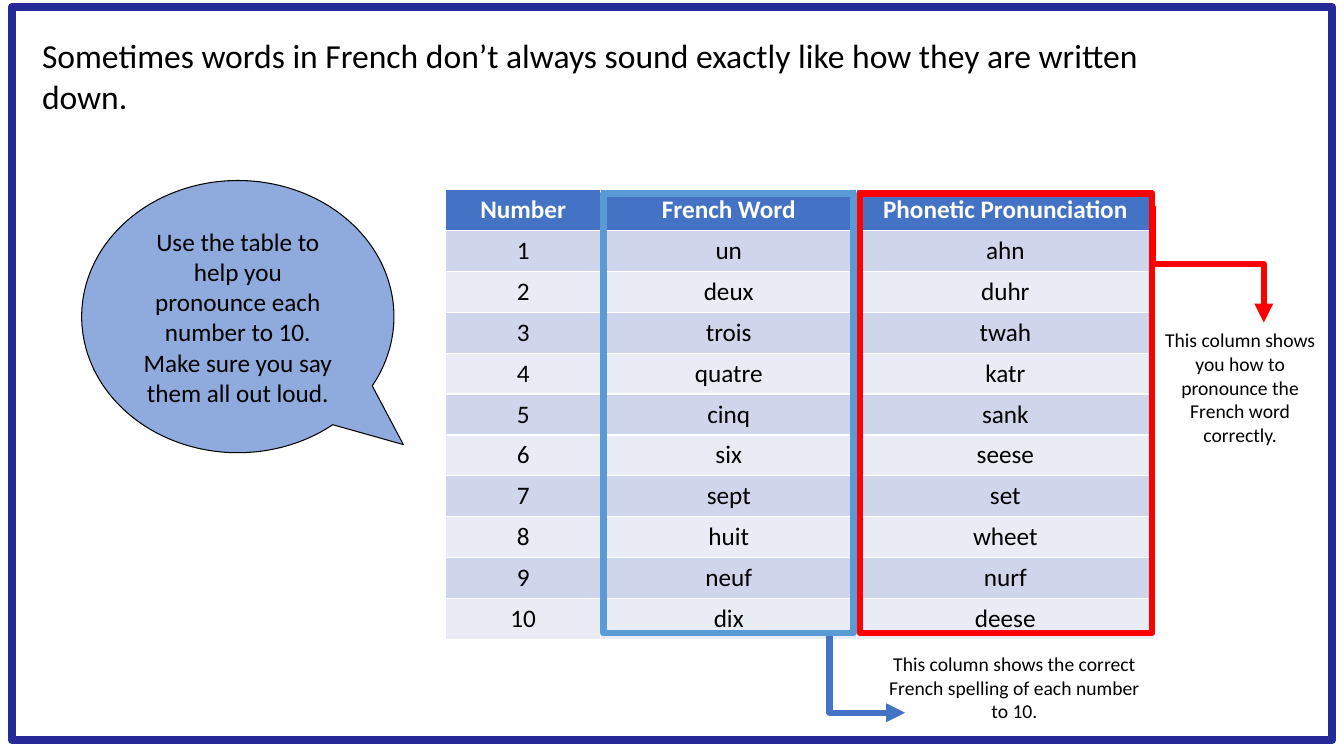
from lxml import etree
from pptx import Presentation
from pptx.dml.color import RGBColor
from pptx.enum.shapes import MSO_CONNECTOR, MSO_SHAPE
from pptx.enum.text import MSO_ANCHOR, PP_ALIGN
from pptx.oxml.ns import qn
from pptx.util import Cm, Pt

ELBOW = MSO_CONNECTOR.ELBOW
RECTANGLE = MSO_SHAPE.RECTANGLE
SPEECH_BUBBLE = MSO_SHAPE.OVAL_CALLOUT
MIDDLE, TOP = MSO_ANCHOR.MIDDLE, MSO_ANCHOR.TOP
LEFT, CENTER = PP_ALIGN.LEFT, PP_ALIGN.CENTER

COLORS = {
    "text": "000000",
    "header_text": "FFFFFF",
    "header": "4472C4",
    "odd_row": "CFD5EA",
    "even_row": "E9EBF5",
    "phonetic": "FF0000",
    "french": "5B9BD5",
    "french_arrow": "4472C4",
    "border": "252A98",
    "bubble": "8FAADC",
}

NUMBERS = [
    ("Number", "French Word", "Phonetic Pronunciation"),
    ("1", "un", "ahn"),
    ("2", "deux", "duhr"),
    ("3", "trois", "twah"),
    ("4", "quatre", "katr"),
    ("5", "cinq", "sank"),
    ("6", "six", "seese"),
    ("7", "sept", "set"),
    ("8", "huit", "wheet"),
    ("9", "neuf", "nurf"),
    ("10", "dix", "deese"),
]


class LessonSlide:
    font = "Calibri"

    def __init__(self, slide):
        self.shapes = slide.shapes

    def color(self, name):
        return RGBColor.from_string(COLORS[name])

    def fill_frame(self, frame, words, size, align=CENTER, color="text", bold=False):
        frame.text = words
        paragraph = frame.paragraphs[0]
        paragraph.alignment = align
        font = paragraph.runs[0].font
        font.name, font.size, font.bold = self.font, Pt(size), bold
        font.color.rgb = self.color(color)

    def text(self, box, words, size, align=CENTER):
        frame = self.shapes.add_textbox(*map(Cm, box)).text_frame
        frame.word_wrap = True
        frame.vertical_anchor = TOP
        self.fill_frame(frame, words, size, align)

    def shape(self, kind, box, line, width, fill=None):
        shape = self.shapes.add_shape(kind, *map(Cm, box))
        shape.shadow.inherit = False
        if fill:
            shape.fill.solid()
            shape.fill.fore_color.rgb = self.color(fill)
        else:
            shape.fill.background()
        shape.line.color.rgb = self.color(line)
        shape.line.width = Pt(width)
        return shape

    def bubble(self, box, tip, words):
        bubble = self.shape(SPEECH_BUBBLE, box, "text", 0.75, "bubble")
        bubble.adjustments[0], bubble.adjustments[1] = tip
        bubble.text_frame.word_wrap = True
        bubble.text_frame.vertical_anchor = MIDDLE
        self.fill_frame(bubble.text_frame, words, 18)

    def arrow(self, start, end, color, rotation=0):
        arrow = self.shapes.add_connector(ELBOW, *map(Cm, start + end))
        arrow.line.color.rgb = self.color(color)
        arrow.line.width = Pt(4.5)
        properties = arrow._element.spPr
        etree.SubElement(properties.find(qn("a:ln")), qn("a:tailEnd"), type="triangle")
        etree.SubElement(properties, qn("a:effectLst"))
        if rotation:
            properties.find(qn("a:xfrm")).set("rot", str(rotation * 60000))

    def table(self, left, top, widths, row_height, rows):
        box = (left, top, sum(widths), row_height * len(rows))
        table = self.shapes.add_table(len(rows), len(widths), *map(Cm, box)).table
        for column, width in zip(table.columns, widths):
            column.width = Cm(width)
        for r, row in enumerate(rows):
            header = r == 0
            fill = "header" if header else "odd_row" if r % 2 else "even_row"
            for c, words in enumerate(row):
                cell = table.cell(r, c)
                cell.fill.solid()
                cell.fill.fore_color.rgb = self.color(fill)
                color = "header_text" if header else "text"
                self.fill_frame(cell.text_frame, words, 18, color=color, bold=header)


def main():
    presentation = Presentation()
    presentation.slide_width, presentation.slide_height = Cm(33.87), Cm(19.05)
    lesson = LessonSlide(presentation.slides.add_slide(presentation.slide_layouts[6]))

    lesson.table(11.23, 4.78, (3.91, 6.45, 7.49), 1, NUMBERS)
    lesson.text(
        (0.81, 0.76, 28.5, 2.31),
        "Sometimes words in French don’t always sound exactly like how they are written down.",
        24, LEFT,
    )
    lesson.shape(RECTANGLE, (21.67, 4.88, 7.37, 11.07), "phonetic", 4.5)
    lesson.arrow((31.93, 5.26), (28.98, 8.05), "phonetic", 270)
    lesson.text(
        (29.03, 8.15, 4.45, 3.25),
        "This column shows you how to pronounce the French word correctly.", 14,
    )
    lesson.arrow((19, 15.95), (22.81, 17.96), "french_arrow")
    lesson.shape(RECTANGLE, (15.21, 4.88, 6.3, 11.07), "french", 4.5)
    lesson.text(
        (21.92, 16.31, 7.29, 2.06),
        "This column shows the correct French spelling of each number to 10.", 14,
    )
    lesson.shape(RECTANGLE, (0.3, 0.18, 33.27, 18.47), "border", 6)
    lesson.bubble(
        (2.06, 4.55, 7.87, 6.86), (0.53, 0.47),
        "Use the table to help you pronounce each number to 10. "
        "Make sure you say them all out loud.",
    )
    presentation.save("out.pptx")


if __name__ == "__main__":
    main()
